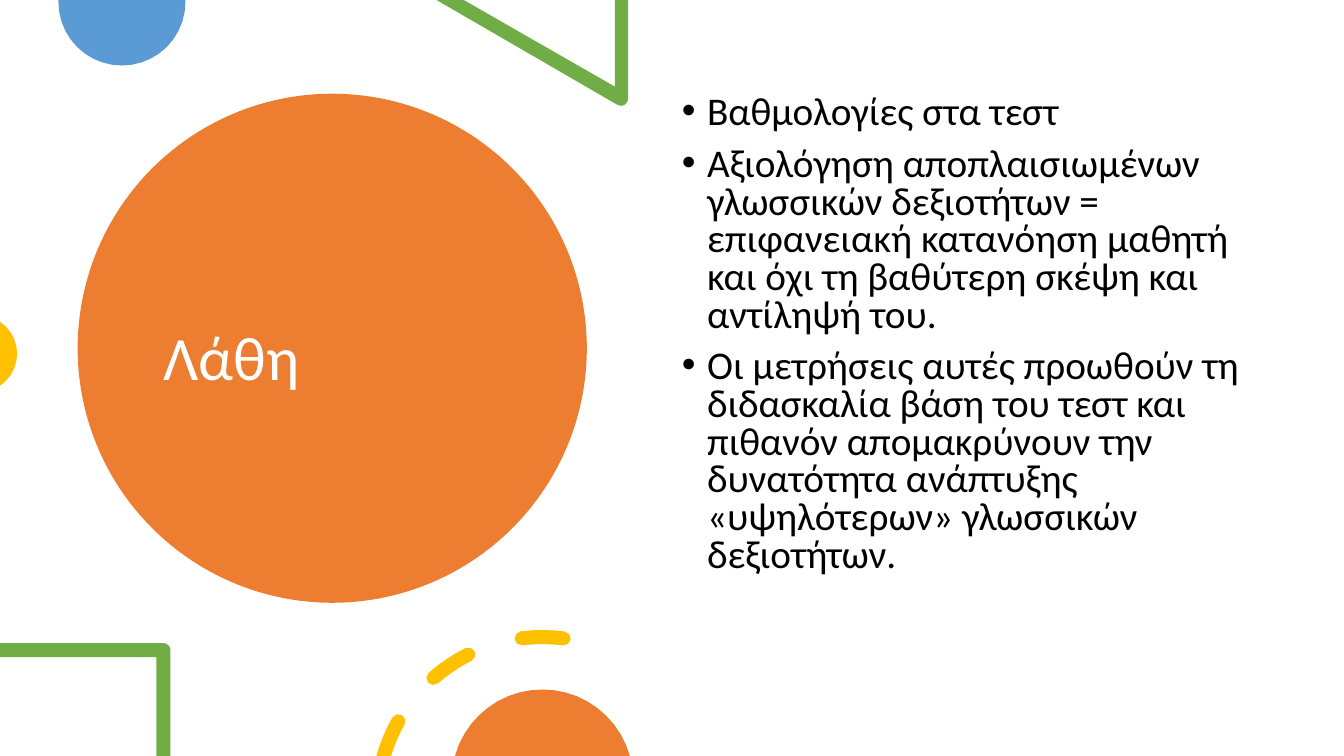
from math import asin, cos, degrees, radians, sin

from lxml import etree
from pptx import Presentation
from pptx import util as u
from pptx.dml.color import RGBColor
from pptx.enum import shapes, text
from pptx.oxml import ns

WIDTH, HEIGHT = 13.33, 7.5
FONT = "Calibri"
BLACK = RGBColor(0x00, 0x00, 0x00)
WHITE = RGBColor(0xFF, 0xFF, 0xFF)
ORANGE = RGBColor(0xED, 0x7D, 0x31)
BLUE = RGBColor(0x5B, 0x9B, 0xD5)
GREEN = RGBColor(0x70, 0xAD, 0x47)
YELLOW = RGBColor(0xFF, 0xC0, 0x00)

TITLE = "Λάθη"
POINTS = [
    "Βαθμολογίες στα τεστ",
    "Αξιολόγηση αποπλαισιωμένων γλωσσικών δεξιοτήτων = επιφανειακή κατανόηση "
    "μαθητή και όχι τη βαθύτερη σκέψη και αντίληψή του.",
    "Οι μετρήσεις αυτές προωθούν τη διδασκαλία βάση του τεστ και πιθανόν "
    "απομακρύνουν την δυνατότητα ανάπτυξης «υψηλότερων» γλωσσικών δεξιοτήτων.",
]


def inches(*lengths):
    return [u.Inches(length) for length in lengths]


def paint(shape, color):
    shape.fill.solid()
    shape.fill.fore_color.rgb = color
    shape.line.fill.background()
    shape.shadow.inherit = False


def arc(x, y, radius, start, end, steps=4):
    angles = [radians(start + (end - start) * i / steps) for i in range(steps + 1)]
    return [(x + radius * cos(a), y + radius * sin(a)) for a in angles]


def add_outline(slide, color, *contours):
    builder = slide.shapes.build_freeform(*inches(*contours[0][0]))
    for index, contour in enumerate(contours):
        if index:
            builder.move_to(*inches(*contour[0]))
        builder.add_line_segments([inches(*point) for point in contour[1:]], close=True)
    paint(builder.convert_to_shape(), color)


def add_text(paragraph, words, size, color, spacing):
    paragraph.alignment = text.PP_ALIGN.LEFT
    paragraph.line_spacing = spacing
    run = paragraph.add_run()
    run.text = words
    run.font.name = FONT
    run.font.size = u.Pt(size)
    run.font.color.rgb = color


def add_title_disc(slide, left, top, size):
    disc = slide.shapes.add_shape(shapes.MSO_SHAPE.OVAL, *inches(left, top, size, size))
    paint(disc, ORANGE)
    title = slide.shapes.title
    title._element.addprevious(disc._element)
    title.left, title.top, title.width, title.height = inches(
        left + 0.75, top + 0.42, size * 0.7, size * 0.88)
    frame = title.text_frame
    frame.word_wrap = True
    frame.auto_size = text.MSO_AUTO_SIZE.NONE
    frame.vertical_anchor = text.MSO_ANCHOR.MIDDLE
    add_text(frame.paragraphs[0], TITLE, 44, WHITE, 0.9)


def add_points(slide, left, top, width, height):
    frame = slide.shapes.add_textbox(*inches(left, top, width, height)).text_frame
    frame.word_wrap = True
    for index, point in enumerate(POINTS):
        paragraph = frame.add_paragraph() if index else frame.paragraphs[0]
        properties = paragraph._p.get_or_add_pPr()
        properties.set("marL", str(u.Inches(0.25)))
        properties.set("indent", str(-u.Inches(0.25)))
        etree.SubElement(properties, ns.qn("a:buFont"), typeface="Arial")
        etree.SubElement(properties, ns.qn("a:buChar"), char="•")
        paragraph.space_before = u.Pt(10 if index else 0)
        add_text(paragraph, point, 28, BLACK, 0.8)


def add_top_corner(slide, right):
    add_outline(slide, BLUE, arc(1.21, 0.02, 0.63, 0, 180, 20) + [(0.58, 0), (1.84, 0)])
    tip = arc(right - 0.07, 0.98, 0.07, 0, 120)
    add_outline(slide, GREEN, [(right, 0)] + tip + [
        (right - 1.9, 0), (right - 1.63, 0), (right - 0.13, 0.86), (right - 0.13, 0)])


def add_left_edge(slide, middle):
    add_outline(slide, YELLOW, arc(-0.21, middle, 0.38, -56, 56, 10))


def add_square_corner(slide, top, right, band):
    corner = arc(right - 0.07, top + 0.07, 0.07, -90, 0)
    add_outline(slide, GREEN, [(0, top)] + corner + [
        (right, HEIGHT), (right - band, HEIGHT),
        (right - band, top + band), (0, top + band)])


def dash(x, y, radius, start, end, band):
    outer, inner = radius + band / 2, radius - band / 2

    def cap(angle, turn):
        center = arc(x, y, radius, angle, angle, 1)[0]
        return arc(*center, band / 2, angle + turn, angle + turn + 180)

    bottom = y - HEIGHT
    cut = y + radius * sin(radians(start)) > HEIGHT - band
    first_outer = 180 + degrees(asin(bottom / outer)) if cut else start
    first_inner = 180 + degrees(asin(bottom / inner)) if cut else start
    return (arc(x, y, outer, first_outer, end) + cap(end, 0)
            + arc(x, y, inner, end, first_inner) + ([] if cut else cap(start, 180)))


def add_dashed_sun(slide, x):
    ends = [209.4 + 34 * index for index in range(3)]
    add_outline(slide, YELLOW, *[dash(x, 7.96, 1.64, end - 14.6, end, 0.14) for end in ends])
    add_outline(slide, ORANGE, arc(x, 7.74, 0.9, 195.5, 344.5, 20))


def main():
    presentation = Presentation()
    presentation.slide_width, presentation.slide_height = inches(WIDTH, HEIGHT)
    slide = presentation.slides.add_slide(presentation.slide_layouts[5])
    slide.background.fill.solid()
    slide.background.fill.fore_color.rgb = WHITE
    add_title_disc(slide, 0.77, 0.93, 5.05)
    add_top_corner(slide, 6.23)
    add_left_edge(slide, 3.51)
    add_points(slide, WIDTH / 2, HEIGHT * 0.12, 5.75, 5.35)
    add_square_corner(slide, 6.38, 1.69, 0.14)
    add_dashed_sun(slide, 5.38)
    presentation.save("out.pptx")


if __name__ == "__main__":
    main()
